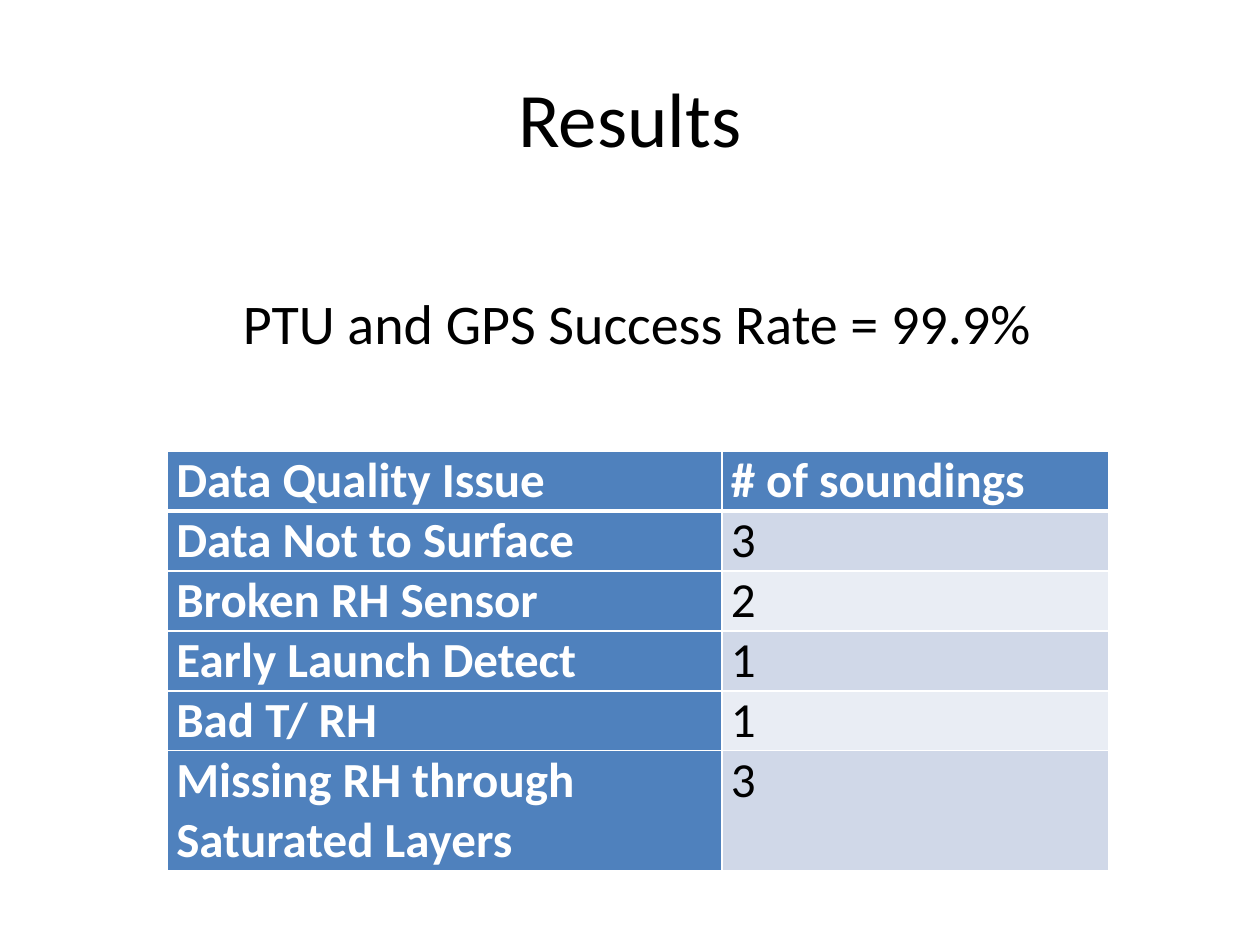
import pptx
import pptx.util
import pptx.dml.color
import pptx.enum.text
import pptx.oxml.ns
import lxml.etree

Inches, Pt = pptx.util.Inches, pptx.util.Pt
ALIGN, ANCHOR = pptx.enum.text.PP_ALIGN, pptx.enum.text.MSO_ANCHOR

TITLE = "Results"
RATE = "PTU and GPS Success Rate = 99.9%"
ROWS = [
    ("Data Quality Issue", "# of soundings"),
    ("Data Not to Surface", "3 "),
    ("Broken RH Sensor", "2"),
    ("Early Launch Detect", "1"),
    ("Bad T/ RH", "1"),
    ("Missing RH through Saturated Layers", "3"),
]
LEFT_ROWS = (4, 5)  # their first cells are left-aligned, all others justified
WIDTHS = (4.4, 3.07)
LINE = 0.47
HEIGHTS = [LINE] * 5 + [2 * LINE]
COLORS = {"text": "000000", "white": "FFFFFF", "head": "4F81BD",
          "odd": "D0D8E8", "even": "E9EDF4"}
MARGINS = {"margin_left": Inches(0.07), "margin_right": Inches(0.07),
           "margin_top": 0, "margin_bottom": 0}


def tint(name):
    return pptx.dml.color.RGBColor.from_string(COLORS[name])


def write(frame, text, size, color="text", bold=False, align=ALIGN.LEFT):
    frame.text = text
    par = frame.paragraphs[0]
    par.alignment = align
    font = par.runs[0].font
    for key, value in {"name": "Calibri", "size": Pt(size), "bold": bold}.items():
        setattr(font, key, value)
    font.color.rgb = tint(color)


def place(shape, *box):
    for key, value in zip(("left", "top", "width", "height"), box):
        setattr(shape, key, Inches(value))


def edge(cell, side, width):
    """Add a white border; call before filling the cell, as XML order matters."""
    props = cell._tc.get_or_add_tcPr()
    name = pptx.oxml.ns.qn
    line = lxml.etree.SubElement(props, name("a:ln" + side), w=str(Pt(width)))
    fill = lxml.etree.SubElement(line, name("a:solidFill"))
    lxml.etree.SubElement(fill, name("a:srgbClr"), val=COLORS["white"])


def style(cell, text, row, col):
    head = row == 0 or col == 0
    for side in "LRTB":
        thick = (row == 0 and side == "B") or (row == 1 and side == "T")
        edge(cell, side, 3 if thick else 1)
    cell.fill.solid()
    cell.fill.fore_color.rgb = tint("head" if head else "odd" if row % 2 else "even")
    for key, value in MARGINS.items():
        setattr(cell, key, value)
    left = col == 0 and row in LEFT_ROWS
    write(cell.text_frame, text, 28, "white" if head else "text", head,
          ALIGN.LEFT if left else ALIGN.JUSTIFY)


def main():
    deck = pptx.Presentation()
    deck.slide_width, deck.slide_height = Inches(10), Inches(7.5)
    slide = deck.slides.add_slide(deck.slide_layouts[5])

    title = slide.shapes.title
    place(title, 0.5, 0.3, 9, 1.25)
    write(title.text_frame, TITLE, 44, align=ALIGN.CENTER)
    title.text_frame.vertical_anchor = ANCHOR.MIDDLE

    box = (1.33, 3.58, sum(WIDTHS), sum(HEIGHTS))
    table = slide.shapes.add_table(
        len(ROWS), len(WIDTHS), *map(Inches, box)).table
    for col, width in zip(table.columns, WIDTHS):
        col.width = Inches(width)
    for row, height in zip(table.rows, HEIGHTS):
        row.height = Inches(height)
    for row, texts in enumerate(ROWS):
        for col, text in enumerate(texts):
            style(table.cell(row, col), text, row, col)

    rate = slide.shapes.add_textbox(*map(Inches, (1.83, 2.24, 6.52, 0.64)))
    write(rate.text_frame, RATE, 32)
    rate.text_frame.word_wrap = False
    rate.text_frame.auto_size = pptx.enum.text.MSO_AUTO_SIZE.SHAPE_TO_FIT_TEXT

    deck.save("out.pptx")


if __name__ == "__main__":
    main()
